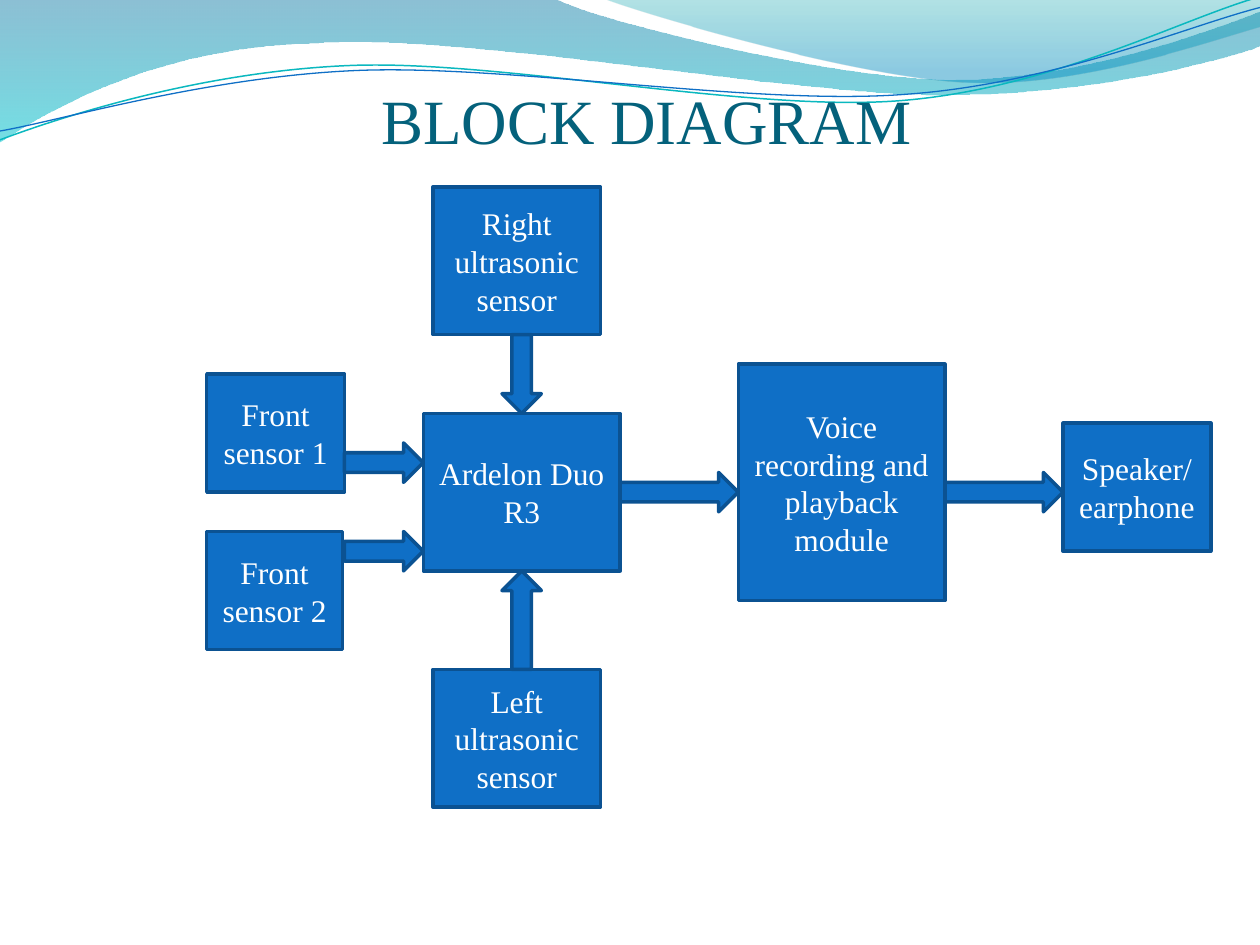
from math import cos, radians, sin
from typing import NamedTuple

from lxml import etree
from pptx import Presentation
from pptx.dml.color import RGBColor
from pptx.enum.shapes import MSO_SHAPE
from pptx.enum.text import MSO_ANCHOR, PP_ALIGN
from pptx.oxml.ns import qn
from pptx.util import Emu, Inches, Pt

RECT = MSO_SHAPE.RECTANGLE
RIGHT, DOWN, UP = MSO_SHAPE.RIGHT_ARROW, MSO_SHAPE.DOWN_ARROW, MSO_SHAPE.UP_ARROW
CENTER, MIDDLE, BOTTOM = PP_ALIGN.CENTER, MSO_ANCHOR.MIDDLE, MSO_ANCHOR.BOTTOM

COLORS = {
    "block": "0F6FC6", "edge": "0B5292", "label": "FFFFFF", "title": "04617B",
    "wave_top": "0074A1", "wave_low": "00C6CF",
    "crest_top": "00A1A9", "crest_low": "008BBF", "strand": "0AB8BF",
}
FONT = "Times New Roman"
GRID_COLUMNS = 128
STRAND_TILT = 2.7


class Cell(NamedTuple):
    """A place on the square grid, in columns and rows."""
    left: float
    top: float
    width: float
    height: float


class Block(NamedTuple):
    cell: Cell
    kind: MSO_SHAPE
    label: str = ""


class Stop(NamedTuple):
    color: str
    position: float
    opacity: int


class Wave(NamedTuple):
    """Points in inches: a start, then three for a curve or one for a line."""
    start: tuple
    segments: list
    stops: tuple = ()
    line: str = ""
    weight: float = 0
    pivot: tuple = ()


WAVES = [
    Wave((0, 0), [
        (4.4, -0.01),
        (4.76, 0.17, 6.64, 0.63, 7.58, 0.63),
        (8.53, 0.63, 9.58, 0.26, 10, 0.09),
        (10.01, 0.36),
        (9.83, 0.44, 8.7, 0.76, 7.46, 0.75),
        (6.22, 0.75, 3.82, 0.28, 2.57, 0.34),
        (1.29, 0.36, 0.46, 0.83, -0.01, 1.13),
        (0, 0),
    ], stops=(Stop("wave_top", 0, 45), Stop("wave_low", 1, 55))),
    Wave((4.79, -0.01), [
        (5.09, 0.11, 6.82, 0.62, 7.69, 0.65),
        (8.56, 0.69, 9.61, 0.32, 10, 0.21),
        (10, 0),
        (4.79, -0.01),
    ], stops=(Stop("crest_top", 0, 30), Stop("crest_low", 0.8, 45))),
    Wave((0, 1.11), [
        (0.48, 0.93, 1.58, 0.57, 2.77, 0.52),
        (3.95, 0.47, 5.93, 0.89, 7.13, 0.8),
        (8.33, 0.71, 9.38, 0.15, 9.98, -0.02),
    ], line="strand", weight=0.85, pivot=(4.99, 0.57)),
    Wave((0, 1.04), [
        (0.47, 0.96, 1.64, 0.61, 2.83, 0.56),
        (4.03, 0.51, 5.97, 0.84, 7.17, 0.75),
        (8.36, 0.67, 9.41, 0.21, 10, 0.06),
    ], line="block", weight=0.75, pivot=(5, 0.59)),
]

BLOCKS = [
    Block(Cell(43, 42, 20, 16), RECT, "Ardelon Duo R3"),
    Block(Cell(21, 38, 14, 12), RECT, "Front sensor 1"),
    Block(Cell(21, 54, 13.8, 12), RECT, "Front sensor 2"),
    Block(Cell(44, 19, 17, 15), RECT, "Right ultrasonic sensor"),
    Block(Cell(44, 68, 17, 14), RECT, "Left ultrasonic sensor"),
    Block(Cell(75, 37, 21, 24), RECT, "Voice recording and playback module"),
    Block(Cell(108, 43, 15, 13), RECT, "Speaker/earphone"),
    Block(Cell(35, 45, 8, 4), RIGHT),
    Block(Cell(35, 54, 8, 4), RIGHT),
    Block(Cell(51, 34, 4, 8), DOWN),
    Block(Cell(51, 58, 4, 10), UP),
    Block(Cell(63, 48, 12, 4), RIGHT),
    Block(Cell(96, 48, 12, 4), RIGHT),
]


def rgb(name: str) -> RGBColor:
    return RGBColor.from_string(COLORS[name])


def turn(point: tuple, pivot: tuple) -> tuple:
    """Turn a point clockwise, so that the shape's own rotation brings it back."""
    angle = radians(STRAND_TILT)
    x, y = point[0] - pivot[0], point[1] - pivot[1]
    return (pivot[0] + x * cos(angle) - y * sin(angle),
            pivot[1] + x * sin(angle) + y * cos(angle))


def bend(shape, segments: list) -> None:
    """Join the lines of each three-point segment into one Bézier curve."""
    outline = next(shape.element.iter(qn("a:path")))
    lines = iter(outline.findall(qn("a:lnTo")))
    for segment in segments:
        first = next(lines)
        if len(segment) == 6:
            first.addprevious(curve := etree.Element(qn("a:cubicBezTo")))
            for line in (first, next(lines), next(lines)):
                curve.append(line[0])
                outline.remove(line)


def fill_gradient(shape, stops: tuple) -> None:
    shape.fill.gradient()
    shape.fill.gradient_angle = 270
    for target, stop in zip(shape.fill.gradient_stops, stops):
        target.color.rgb = rgb(stop.color)
        target.position = stop.position
    for color, stop in zip(shape.element.spPr.iter(qn("a:srgbClr")), stops):
        etree.SubElement(color, qn("a:alpha"), val=str(stop.opacity * 1000))


def draw_wave(page, wave: Wave) -> None:
    points = [wave.start]
    for segment in wave.segments:
        points += zip(segment[::2], segment[1::2])
    if wave.pivot:
        points = [turn(point, wave.pivot) for point in points]
    points = [(Inches(x), Inches(y)) for x, y in points]
    builder = page.shapes.build_freeform(*points[0])
    builder.add_line_segments(points[1:], close=bool(wave.stops))
    shape = builder.convert_to_shape()
    bend(shape, wave.segments)
    shape.shadow.inherit = False
    if wave.stops:
        fill_gradient(shape, wave.stops)
        shape.line.fill.background()
    else:
        shape.rotation = 360 - STRAND_TILT
        shape.fill.background()
        shape.line.color.rgb = rgb(wave.line)
        shape.line.width = Pt(wave.weight)


def write(frame, text: str, size: float, color: str, anchor: MSO_ANCHOR) -> None:
    frame.word_wrap = True
    frame.vertical_anchor = anchor
    para = frame.paragraphs[0]
    para.alignment = CENTER
    span = para.add_run()
    span.text = text
    for name, value in {"name": FONT, "size": Pt(size), "bold": False}.items():
        setattr(span.font, name, value)
    span.font.color.rgb = rgb(color)


def draw_block(page, block: Block, unit: float) -> None:
    shape = page.shapes.add_shape(block.kind, *(Emu(round(n * unit)) for n in block.cell))
    shape.shadow.inherit = False
    shape.fill.solid()
    shape.fill.fore_color.rgb = rgb("block")
    shape.line.color.rgb = rgb("edge")
    shape.line.width = Pt(2)
    if block.label:
        write(shape.text_frame, block.label, 18, "label", MIDDLE)


def place_title(page, text: str) -> None:
    title = page.shapes.title
    page.shapes.element.append(title.element)
    bounds = {"left": 0.63, "top": 0, "width": 9, "height": 1.25}
    for name, value in bounds.items():
        setattr(title, name, Inches(value))
    margins = {"margin_left": 0, "margin_top": 0.05, "margin_right": 0, "margin_bottom": 0}
    for name, value in margins.items():
        setattr(title.text_frame, name, Inches(value))
    write(title.text_frame, text, 36, "title", BOTTOM)


def main() -> None:
    deck = Presentation()
    deck.slide_width, deck.slide_height = Inches(10), Inches(7.5)
    page = deck.slides.add_slide(deck.slide_layouts[5])
    for wave in WAVES:
        draw_wave(page, wave)
    place_title(page, "BLOCK DIAGRAM")
    for block in BLOCKS:
        draw_block(page, block, deck.slide_width / GRID_COLUMNS)
    deck.save("out.pptx")


if __name__ == "__main__":
    main()
